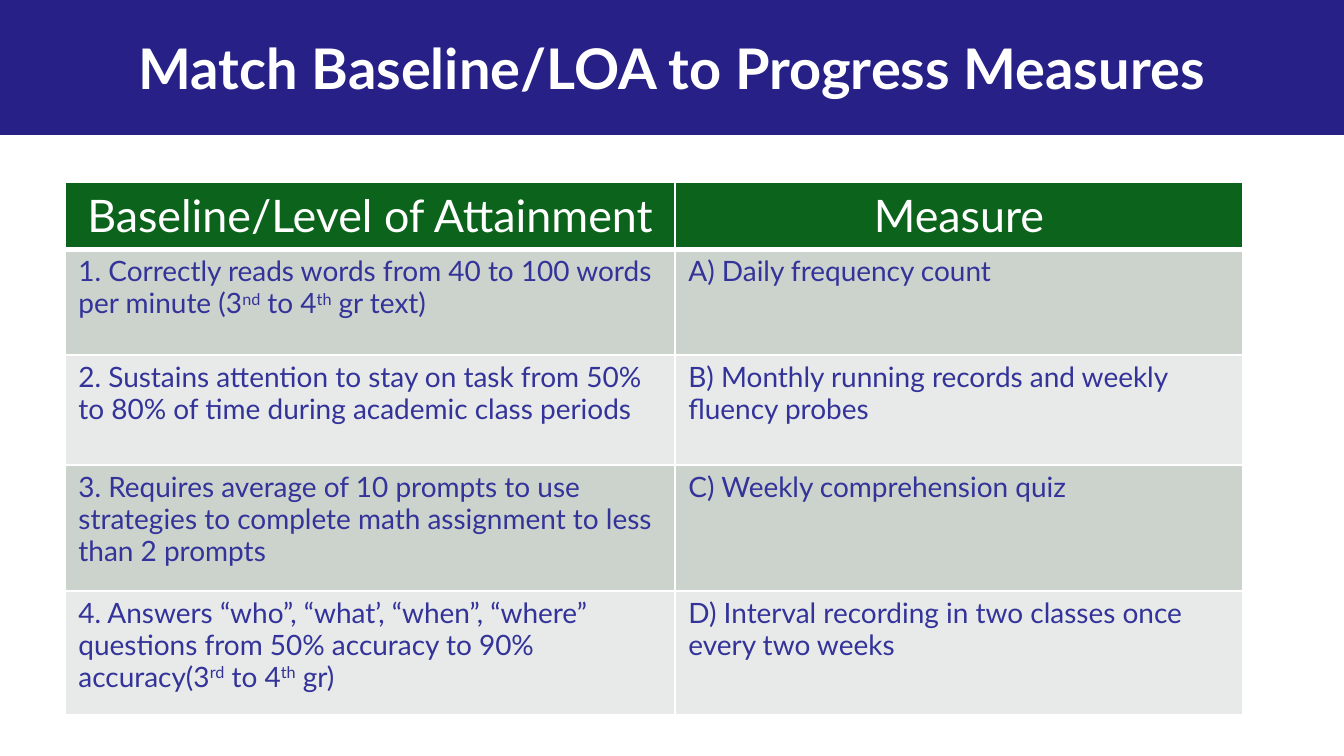
import lxml.etree
import pptx
import pptx.dml.color
import pptx.enum.shapes
import pptx.enum.text
import pptx.oxml.ns
import pptx.util

SCALE = 914400 / 134.4
NAVY = pptx.dml.color.RGBColor(0x26, 0x20, 0x87)
INDIGO = pptx.dml.color.RGBColor(0x33, 0x33, 0x99)
GREEN = pptx.dml.color.RGBColor(0x0C, 0x63, 0x1B)
SAGE = pptx.dml.color.RGBColor(0xCC, 0xD3, 0xCD)
MIST = pptx.dml.color.RGBColor(0xE7, 0xEA, 0xE8)
WHITE = pptx.dml.color.RGBColor(0xFF, 0xFF, 0xFF)

CENTER = pptx.enum.text.PP_ALIGN.CENTER
LEFT = pptx.enum.text.PP_ALIGN.LEFT
TITLE = {
    "font": {"name": "Lato", "size": pptx.util.Pt(30), "bold": True},
    "color": WHITE,
    "para": {"alignment": CENTER, "space_after": pptx.util.Pt(30)},
}
HEADER = {
    "font": {"name": "Lato", "size": pptx.util.Pt(24), "bold": False},
    "color": WHITE,
    "para": {"alignment": CENTER},
}
BODY = {
    "font": {"name": "Lato", "size": pptx.util.Pt(15), "bold": False},
    "color": INDIGO,
    "para": {"alignment": LEFT, "line_spacing": 0.95},
}

COLUMNS = [610, 568]
ROWS = [60, 106, 110, 126, 124]
GOALS = [
    ("Baseline/Level of Attainment", "Measure"),
    ("1. Correctly reads words from 40 to 100 words per minute (3^nd^ to 4^th^ gr text)",
     "A) Daily frequency count"),
    ("2. Sustains attention to stay on task from 50% to 80% of time during academic class periods",
     "B) Monthly running records and weekly fluency probes"),
    ("3. Requires average of 10 prompts to use strategies to complete math assignment to less than 2 prompts",
     "C) Weekly comprehension quiz"),
    ("4. Answers “who”, “what’, “when”, “where” questions from 50% accuracy to 90% accuracy(3^rd^ to 4^th^ gr)",
     "D) Interval recording in two classes once every two weeks"),
]


def px(length):
    return pptx.util.Emu(round(length * SCALE))


def format_object(target, values):
    for name, value in values.items():
        setattr(target, name, value)


class PageBuilder:
    def __init__(self, page):
        self.page = page

    def add_text(self, para, text, style):
        format_object(para, style["para"])
        for index, part in enumerate(text.split("^")):
            span = para.add_run()
            span.text = part
            format_object(span.font, style["font"])
            span.font.color.rgb = style["color"]
            if index % 2:
                span.font._element.set("baseline", "30000")

    def band(self, left, top, width, height, color):
        box = self.page.shapes.add_shape(
            pptx.enum.shapes.MSO_SHAPE.RECTANGLE, *map(px, (left, top, width, height)))
        box.shadow.inherit = False
        box.fill.solid()
        box.fill.fore_color.rgb = color
        box.line.fill.background()
        self.page.shapes._spTree.insert(2, box._element)

    def title(self, text, left, top, width, height):
        box = self.page.shapes.title
        format_object(box, {
            "left": px(left), "top": px(top), "width": px(width), "height": px(height)})
        format_object(box.text_frame, {
            "word_wrap": True,
            "auto_size": pptx.enum.text.MSO_AUTO_SIZE.NONE,
            "vertical_anchor": pptx.enum.text.MSO_ANCHOR.MIDDLE,
        })
        self.add_text(box.text_frame.paragraphs[0], text, TITLE)

    def border(self, cell, side, points):
        properties = cell._tc.get_or_add_tcPr()
        line = lxml.etree.SubElement(
            properties, pptx.oxml.ns.qn("a:ln" + side), w=str(pptx.util.Pt(points)))
        fill = lxml.etree.SubElement(line, pptx.oxml.ns.qn("a:solidFill"))
        lxml.etree.SubElement(fill, pptx.oxml.ns.qn("a:srgbClr"), val=str(WHITE))

    def table(self, left, top, columns, rows, content):
        frame = self.page.shapes.add_table(
            len(rows), len(columns), px(left), px(top), px(sum(columns)), px(sum(rows)))
        grid = frame.table
        format_object(grid, {"first_row": False, "horz_banding": False})
        for column, width in zip(grid.columns, columns):
            column.width = px(width)
        for number, (row, height, texts) in enumerate(zip(grid.rows, rows, content)):
            row.height = px(height)
            style = BODY if number else HEADER
            color = (MIST, SAGE)[number % 2] if number else GREEN
            sides = {"L": 1, "R": 1, "T": 3 if number == 1 else 1, "B": 1 if number else 3}
            for cell, text in zip(row.cells, texts):
                for side, points in sides.items():
                    self.border(cell, side, points)
                cell.fill.solid()
                cell.fill.fore_color.rgb = color
                self.add_text(cell.text_frame.paragraphs[0], text, style)


def main():
    deck = pptx.Presentation()
    format_object(deck, {"slide_width": px(1344), "slide_height": px(756)})
    builder = PageBuilder(deck.slides.add_slide(deck.slide_layouts[5]))
    builder.band(-1, 0, 1345, 135, NAVY)
    builder.title("Match Baseline/LOA to Progress Measures", 0, 0, 1344, 135)
    builder.table(65, 182, COLUMNS, ROWS, GOALS)
    deck.save("out.pptx")


if __name__ == "__main__":
    main()
